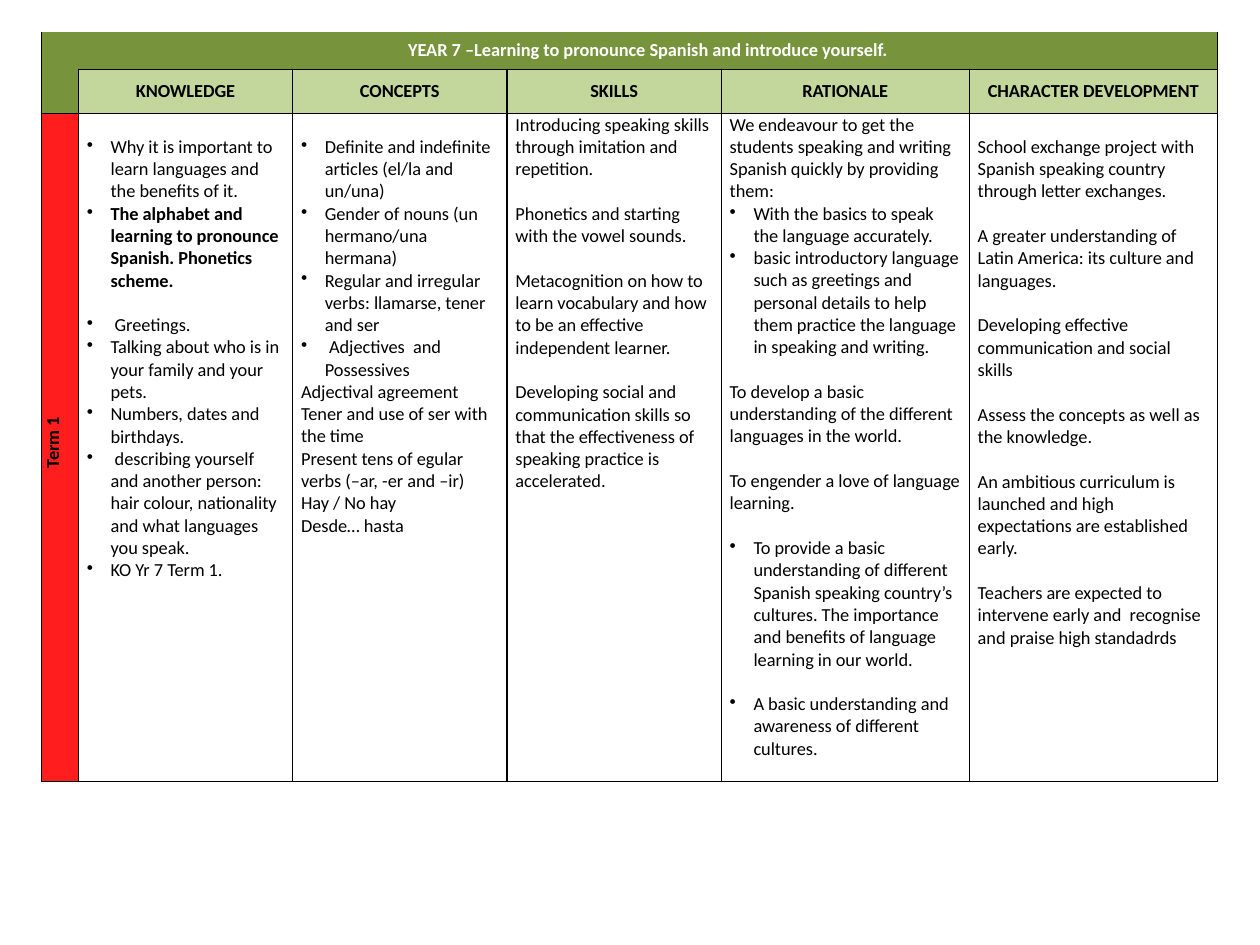
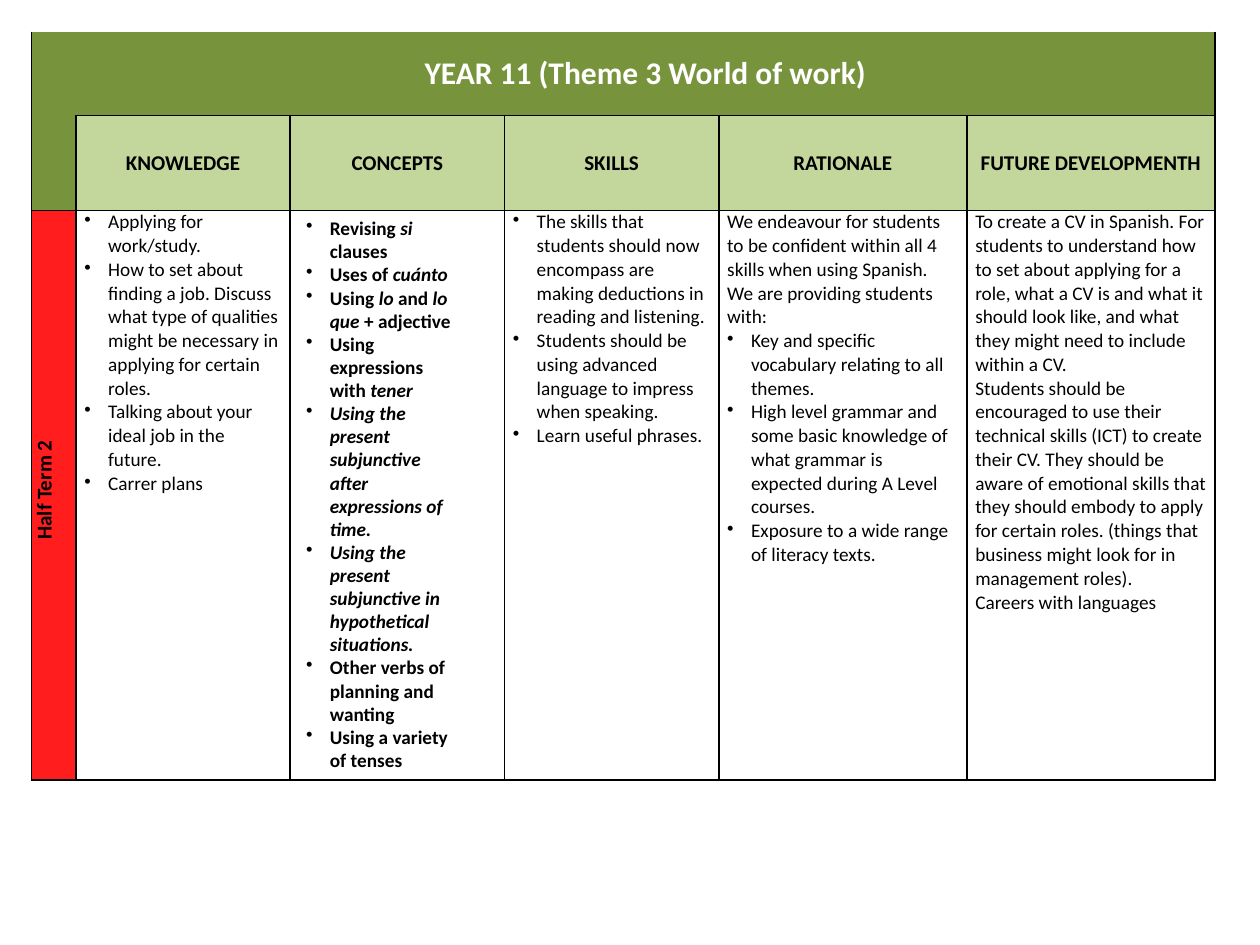
from dataclasses import dataclass

from lxml.etree import SubElement
from pptx import Presentation
from pptx.dml.color import RGBColor
from pptx.enum.text import MSO_ANCHOR as Anchor, MSO_AUTO_SIZE as AutoSize, PP_ALIGN as Align
from pptx.oxml.ns import qn
from pptx.util import Cm, Pt

COLORS = {"band": "77933C", "heading": "C3D69B", "term": "FF1D1D",
          "body": "FFFFFF", "light": "FFFFFF", "dark": "000000"}
FONT = "Calibri"
LINE_HEIGHT = 1.22
COLUMNS = [4.32, 4.32, 4.32, 5.0, 5.0]
TABLE_TOP = 0.64
SIDE_INSET = 0.17
HANGING = 0.48


@dataclass
class Item:
    """One paragraph; text between asterisks is italic."""
    text: str
    bullet: bool = False
    gap: bool = False
    bold: bool = False


def bullet(text, **options):
    return Item(text, bullet=True, **options)


def spaced(text):
    return Item(text, gap=True)


class Deck:
    def __init__(self):
        self.presentation = Presentation()
        self.presentation.slide_width = Cm(25.4)
        self.presentation.slide_height = Cm(19.05)
        self.slide = None

    def add_slide(self):
        self.slide = self.presentation.slides.add_slide(self.presentation.slide_layouts[6])

    def style(self, paragraph, size, color="dark", bold=False):
        font = paragraph.font
        font.name, font.size, font.bold = FONT, Pt(size), bold
        font.color.rgb = RGBColor.from_string(COLORS[color])

    def fill_text(self, frame, items, size):
        for index, item in enumerate(items):
            paragraph = frame.paragraphs[0] if index == 0 else frame.add_paragraph()
            self.style(paragraph, size, bold=item.bold)
            for part, text in enumerate(item.text.split("*")):
                if text:
                    run = paragraph.add_run()
                    run.text = text
                    if part % 2:
                        run.font.italic = True
            # A gap before the first paragraph is the cell's top inset
            if item.gap and index:
                paragraph.space_before = Pt(size * LINE_HEIGHT)
            if item.bullet:
                self.add_bullet(paragraph)

    def add_bullet(self, paragraph):
        properties = paragraph._p.get_or_add_pPr()
        properties.set("marL", str(Cm(HANGING)))
        properties.set("indent", str(-Cm(HANGING)))
        mark = properties.makeelement(qn("a:buChar"), {"char": "•"})
        properties.find(qn("a:defRPr")).addprevious(mark)

    def format_cell(self, cell, fill, sides="LRTB", size=10.5):
        cell.margin_left = cell.margin_right = Cm(SIDE_INSET)
        cell.margin_top = cell.margin_bottom = 0
        self.style(cell.text_frame.paragraphs[0], size)
        properties = cell._tc.get_or_add_tcPr()
        for side in "LRTB":
            line = SubElement(properties, qn(f"a:ln{side}"), w=str(Pt(1)))
            if side in sides:
                solid = SubElement(line, qn("a:solidFill"))
                SubElement(solid, qn("a:srgbClr"), val=COLORS["dark"])
            else:
                SubElement(line, qn("a:noFill"))
        cell.fill.solid()
        cell.fill.fore_color.rgb = RGBColor.from_string(COLORS[fill])

    def label(self, cell, text, size, color="dark"):
        cell.vertical_anchor = Anchor.MIDDLE
        paragraph = cell.text_frame.paragraphs[0]
        paragraph.text = text
        paragraph.alignment = Align.CENTER
        self.style(paragraph, size, color, bold=True)

    def add_curriculum(self, left, term_width, rows, title, term, content, sizes):
        """sizes: title, headings, body; content: heading -> items."""
        title_size, heading_size, body_size = sizes
        widths = [term_width, *COLUMNS]
        frame = self.slide.shapes.add_table(len(rows), len(widths), Cm(left), Cm(TABLE_TOP),
                                            Cm(sum(widths)), Cm(sum(rows)))
        table = frame.table
        table.first_row = table.horz_banding = False
        for column, width in zip(table.columns, widths):
            column.width = Cm(width)
        for row, height in zip(table.rows, rows):
            row.height = Cm(height)

        # Title band and corner
        for column in range(len(widths)):
            self.format_cell(table.cell(0, column), "band", "RB" if column else "LB")
        self.format_cell(table.cell(1, 0), "band", "LB")
        table.cell(0, 0).merge(table.cell(1, 0))
        table.cell(0, 1).merge(table.cell(0, len(COLUMNS)))
        self.label(table.cell(0, 1), title, title_size, "light")

        # Term label, turned upwards
        term_cell = table.cell(2, 0)
        self.format_cell(term_cell, "term")
        self.label(term_cell, term, heading_size)
        term_cell._tc.get_or_add_tcPr().set("vert", "vert270")
        term_cell.text_frame.paragraphs[0]._p.get_or_add_pPr().set("marL", str(Cm(0.2)))

        # Headings and content
        for column, (heading, items) in enumerate(content.items(), start=1):
            heading_cell, body_cell = table.cell(1, column), table.cell(2, column)
            self.format_cell(heading_cell, "heading")
            self.label(heading_cell, heading, heading_size)
            self.format_cell(body_cell, "body", size=body_size)
            self.fill_text(body_cell.text_frame, items, body_size)
            if items and items[0].gap:
                body_cell.margin_top = Pt(body_size * LINE_HEIGHT)

    def add_text(self, left, top, width, height, items, size):
        frame = self.slide.shapes.add_textbox(Cm(left), Cm(top), Cm(width), Cm(height)).text_frame
        frame.word_wrap = True
        frame.auto_size = AutoSize.SHAPE_TO_FIT_TEXT
        self.fill_text(frame, items, size)


YEAR_7 = {
    "KNOWLEDGE": [
        bullet("Why it is important to learn languages and the benefits of it.", gap=True),
        bullet("The alphabet and learning to pronounce Spanish. Phonetics scheme.", bold=True),
        bullet(" Greetings.", gap=True),
        bullet("Talking about who is in your family and your pets."),
        bullet("Numbers, dates and birthdays."),
        bullet(" describing yourself and another person: hair colour, nationality "
               "and what languages you speak."),
        bullet("KO Yr 7 Term 1."),
    ],
    "CONCEPTS": [
        bullet("Definite and indefinite articles (el/la and un/una)", gap=True),
        bullet("Gender of nouns (un hermano/una hermana)"),
        bullet("Regular and irregular verbs: llamarse, tener and ser"),
        bullet(" Adjectives  and Possessives"),
        Item("Adjectival agreement"),
        Item("Tener and use of ser with the time"),
        Item("Present tens of egular  verbs (–ar, -er and –ir)"),
        Item("Hay / No hay"),
        Item("Desde… hasta"),
    ],
    "SKILLS": [
        Item("Introducing speaking skills through imitation and repetition."),
        spaced("Phonetics and starting with the vowel sounds."),
        spaced("Metacognition on how to learn vocabulary and how to be an effective "
               "independent learner."),
        spaced("Developing social and communication skills so that the effectiveness of "
               "speaking practice is accelerated."),
    ],
    "RATIONALE": [
        Item("We endeavour to get the students speaking and writing Spanish quickly by "
             "providing them:"),
        bullet("With the basics to speak the language accurately."),
        bullet("basic introductory language such as greetings and personal details to help "
               "them practice the language in speaking and writing."),
        spaced("To develop a basic understanding of the different languages in the world."),
        spaced("To engender a love of language learning."),
        bullet("To provide a basic understanding of different Spanish speaking country’s "
               "cultures. The importance and benefits of language learning in our world.",
               gap=True),
        bullet("A basic understanding and awareness of different cultures.", gap=True),
    ],
    "CHARACTER DEVELOPMENT": [
        spaced("School exchange project with Spanish speaking country through letter exchanges."),
        spaced("A greater understanding of Latin America: its culture and languages."),
        spaced("Developing effective communication and social skills"),
        spaced("Assess the concepts as well as the knowledge."),
        spaced("An ambitious curriculum is launched and high expectations are established early."),
        spaced("Teachers are expected to intervene early and  recognise and praise high "
               "standadrds"),
    ],
}

YEAR_11 = {
    "KNOWLEDGE": [
        bullet("Applying for work/study."),
        bullet("How to set about finding a job. Discuss what type of qualities might be "
               "necessary in applying for certain roles."),
        bullet("Talking about your ideal job in the future."),
        bullet("Carrer plans"),
    ],
    "CONCEPTS": [],
    "SKILLS": [
        bullet("The skills that students should now encompass are making deductions in "
               "reading and listening."),
        bullet("Students should be using advanced language to impress when speaking."),
        bullet("Learn useful phrases."),
    ],
    "RATIONALE": [
        Item("We endeavour for students to be confident within all 4 skills when using "
             "Spanish. We are providing students with:"),
        bullet("Key and specific vocabulary relating to all themes."),
        bullet("High level grammar and some basic knowledge of what grammar is expected "
               "during A Level courses."),
        bullet("Exposure to a wide range of literacy texts."),
    ],
    "FUTURE DEVELOPMENTH": [
        Item("To create a CV in Spanish. For students to understand how to set about applying "
             "for a role, what a CV is and what it should look like, and what they might need "
             "to include within a CV."),
        Item("Students should be encouraged to use their technical skills (ICT) to create "
             "their CV. They should be aware of emotional skills that they should embody to "
             "apply for certain roles. (things that business might look for in management "
             "roles)."),
        Item("Careers with languages"),
    ],
}

YEAR_11_CONCEPTS = [bullet(text, bold=True) for text in (
    "Revising *si* clauses",
    "Uses of *cuánto*",
    "Using *lo *and *lo que *+ adjective",
    "Using expressions with *tener*",
    "*Using the present subjunctive after expressions of time.*",
    "*Using the present subjunctive in hypothetical situations.*",
    "Other verbs of planning and wanting",
    "Using a variety of tenses",
)]


def main():
    deck = Deck()

    # Year 7
    deck.add_slide()
    deck.add_curriculum(0.84, 0.74, [0.76, 0.89, 13.46],
                        "YEAR 7 –Learning to pronounce Spanish and introduce yourself.",
                        "Term 1", YEAR_7, sizes=(10.5, 10.5, 10.5))

    # Year 11, with the concepts in a box over their column
    deck.add_slide()
    deck.add_curriculum(0.64, 0.89, [1.69, 1.91, 11.48], "YEAR 11 (Theme 3 World of work)",
                        "Half Term 2", YEAR_11, sizes=(18, 12, 11))
    deck.add_text(5.92, 4.24, 3.61, 12.78, YEAR_11_CONCEPTS, size=11)

    deck.presentation.save("out.pptx")


if __name__ == "__main__":
    main()
